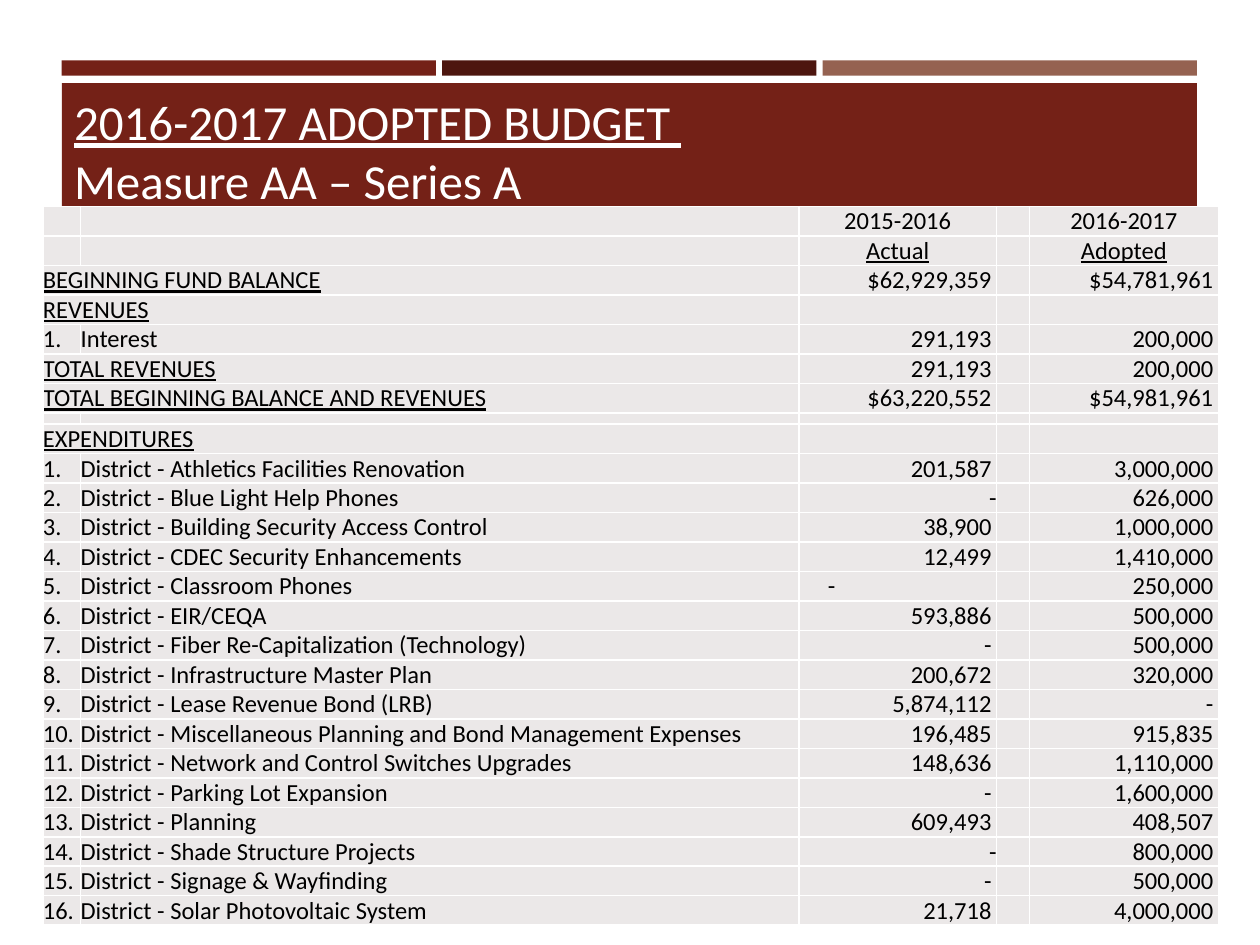
from lxml import etree
from pptx import Presentation
from pptx.dml.color import RGBColor
from pptx.enum.shapes import MSO_SHAPE
from pptx.enum.text import MSO_ANCHOR, PP_ALIGN
from pptx.oxml.ns import qn
from pptx.util import Inches, Pt

RECTANGLE = MSO_SHAPE.RECTANGLE
BOTTOM, MIDDLE = MSO_ANCHOR.BOTTOM, MSO_ANCHOR.MIDDLE
LEFT, CENTER, RIGHT = PP_ALIGN.LEFT, PP_ALIGN.CENTER, PP_ALIGN.RIGHT
FONT = "Calibri"
COLORS = {
    "red": "742117", "dark": "4D160F", "tan": "956251",
    "cell": "EBE8E8", "white": "FFFFFF", "black": "000000",
}


def write(para, text, size=14, color="black", align=LEFT, underline=False):
    para.alignment = align
    span = para.add_run()
    span.text = text
    span.font.name = FONT
    span.font.size = Pt(size)
    span.font.underline = underline
    span.font.color.rgb = RGBColor.from_string(COLORS[color])


def style_cell(cell, size):
    """Give a cell white borders, a grey fill and no margins."""
    properties = cell._tc.get_or_add_tcPr()
    for side in ("a:lnL", "a:lnR", "a:lnT", "a:lnB"):
        line = etree.SubElement(properties, qn(side), w=str(Pt(1)))
        fill = etree.SubElement(line, qn("a:solidFill"))
        etree.SubElement(fill, qn("a:srgbClr"), val=COLORS["white"])
    cell.fill.solid()
    cell.fill.fore_color.rgb = RGBColor.from_string(COLORS["cell"])
    cell.margin_left = cell.margin_right = cell.margin_top = cell.margin_bottom = 0
    # An empty cell takes its height from the end-of-paragraph size
    etree.SubElement(cell.text_frame.paragraphs[0]._p, qn("a:endParaRPr"),
                     sz=str(size * 100))


deck = Presentation()
deck.slide_width, deck.slide_height = Inches(10), Inches(7.5)
page = deck.slides.add_slide(deck.slide_layouts[6])

# Three bars above the title band
bands = [(0.49 + 3.02 * i, 0.48, 2.97, 0.12, color)
         for i, color in enumerate(("red", "dark", "tan"))]
bands.append((0.49, 0.66, 9.01, 1.38, "red"))
for left, top, width, height, color in bands:
    band = page.shapes.add_shape(RECTANGLE, Inches(left), Inches(top),
                                 Inches(width), Inches(height))
    band.shadow.inherit = False
    band.fill.solid()
    band.fill.fore_color.rgb = RGBColor.from_string(COLORS[color])
    band.line.fill.background()

# Title
box = page.shapes.add_textbox(Inches(0.49), Inches(0.53), Inches(8.74), Inches(1.18))
box.text_frame.word_wrap = True
box.text_frame.vertical_anchor = BOTTOM
para = box.text_frame.paragraphs[0]
write(para, "2016-2017 ADOPTED BUDGET ", size=28, color="white", underline=True)
para.add_line_break()
write(para, "Measure AA – Series A", size=28, color="white")

# Budget rows: number, label, actual, adopted; headings have no number
HEADERS = [("2015-2016", "2016-2017"), ("Actual", "Adopted")]
EXPENDITURES = [
    ("Athletics Facilities Renovation", "201,587", "3,000,000"),
    ("Blue Light Help Phones", "-", "626,000"),
    ("Building Security Access Control", "38,900", "1,000,000"),
    ("CDEC Security Enhancements", "12,499", "1,410,000"),
    ("Classroom Phones", "-", "250,000"),
    ("EIR/CEQA", "593,886", "500,000"),
    ("Fiber Re-Capitalization (Technology)", "-", "500,000"),
    ("Infrastructure Master Plan", "200,672", "320,000"),
    ("Lease Revenue Bond (LRB)", "5,874,112", "-"),
    ("Miscellaneous Planning and Bond Management Expenses", "196,485", "915,835"),
    ("Network and Control Switches Upgrades", "148,636", "1,110,000"),
    ("Parking Lot Expansion", "-", "1,600,000"),
    ("Planning", "609,493", "408,507"),
    ("Shade Structure Projects", "-", "800,000"),
    ("Signage & Wayfinding", "-", "500,000"),
    ("Solar Photovoltaic System", "21,718", "4,000,000"),
]
rows = [("", "", *header) for header in HEADERS]
rows += [
    ("", "BEGINNING FUND BALANCE", "$62,929,359", "$54,781,961"),
    ("", "REVENUES", "", ""),
    ("1.", "Interest", "291,193", "200,000"),
    ("", "TOTAL REVENUES", "291,193", "200,000"),
    ("", "TOTAL BEGINNING BALANCE AND REVENUES", "$63,220,552", "$54,981,961"),
    ("", "", "", ""),
    ("", "EXPENDITURES", "", ""),
]
rows += [(f"{i}.", f"District - {name}", actual, adopted)
         for i, (name, actual, adopted) in enumerate(EXPENDITURES, 1)]
FLUSH_DASHES = ("2.", "14.")
LEFT_DASH = "5."

# Table
COLUMN_WIDTHS = (0.3, 5.7, 1.57, 0.26, 1.5)
frame = page.shapes.add_table(len(rows), len(COLUMN_WIDTHS), Inches(0.34), Inches(1.64),
                              Inches(9.32), Inches(5.71))
table = frame.table
table.first_row = table.horz_banding = False
for column, width in zip(table.columns, COLUMN_WIDTHS):
    column.width = Inches(width)

for r, (number, label, actual, adopted) in enumerate(rows):
    is_header = r < len(HEADERS)
    is_spacer = not (label or actual)
    table.rows[r].height = Inches(0.09 if is_spacer else 0.23)
    for cell in table.rows[r].cells:
        style_cell(cell, 5 if is_spacer else 14)
        cell.vertical_anchor = MIDDLE if number else BOTTOM

    # Number and label, or a heading across both columns
    if number:
        write(table.cell(r, 0).text_frame.paragraphs[0], number)
        write(table.cell(r, 1).text_frame.paragraphs[0], label)
    elif label:
        table.cell(r, 0).merge(table.cell(r, 1))
        write(table.cell(r, 0).text_frame.paragraphs[0], label, underline=True)

    # Amounts
    for c, amount in ((2, actual), (4, adopted)):
        if not amount:
            continue
        cell = table.cell(r, c)
        align = CENTER if is_header else RIGHT
        if c == 2 and number == LEFT_DASH:
            align = LEFT
            cell.margin_left = Inches(0.23)
        elif not is_header and not (c == 2 and number in FLUSH_DASHES):
            cell.margin_right = Inches(0.04)
        write(cell.text_frame.paragraphs[0], amount, align=align,
              underline=amount in HEADERS[1])

deck.save("out.pptx")
